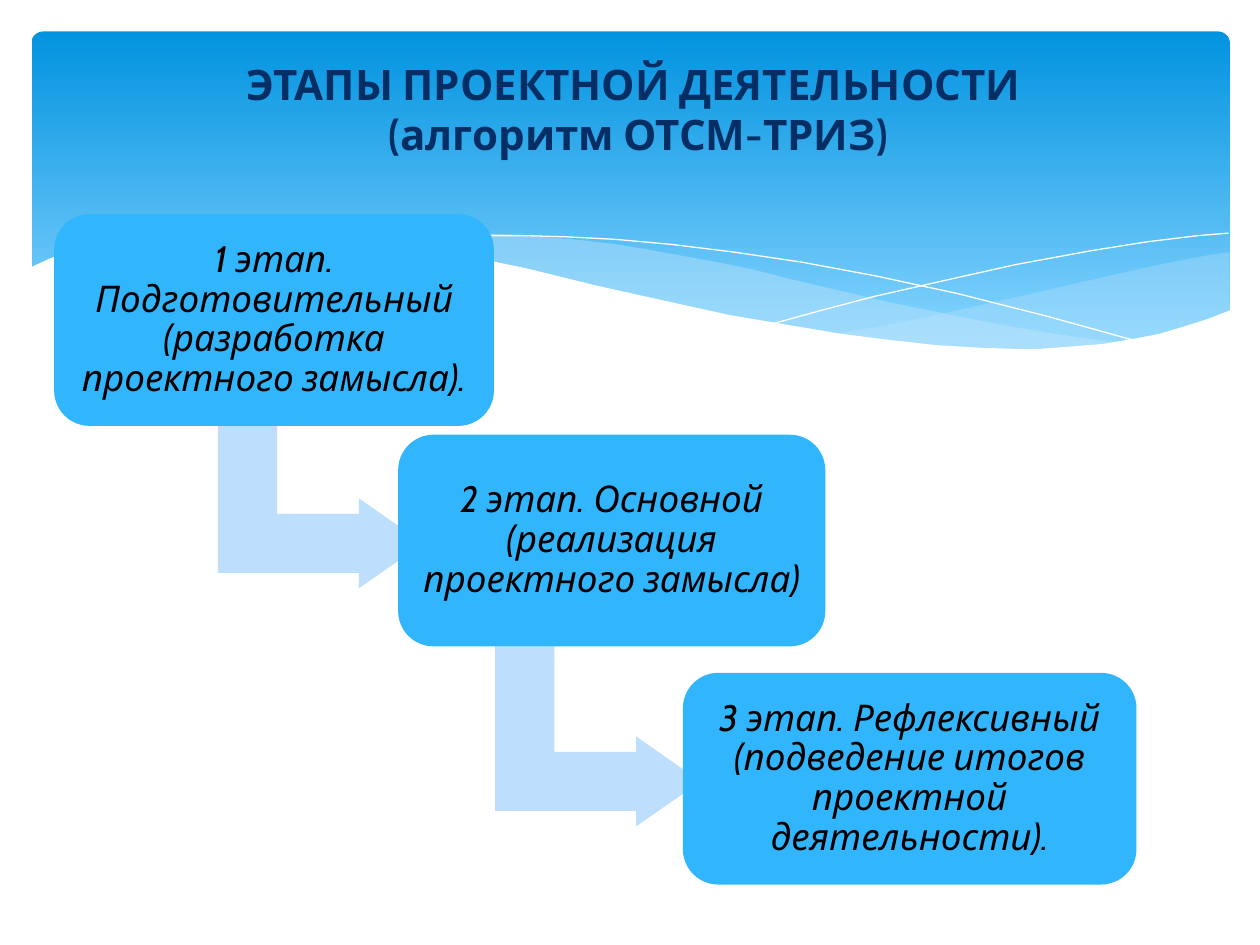
from lxml import etree
from pptx import Presentation
from pptx.dml.color import RGBColor
from pptx.enum.shapes import MSO_SHAPE
from pptx.enum.text import MSO_ANCHOR, PP_ALIGN
from pptx.oxml.ns import qn
from pptx.util import Inches, Pt

ROUNDED = MSO_SHAPE.ROUNDED_RECTANGLE
BENT_ARROW = MSO_SHAPE.BENT_UP_ARROW
WAVE = MSO_SHAPE.WAVE
MIDDLE = MSO_ANCHOR.MIDDLE
CENTER = PP_ALIGN.CENTER

WHITE = RGBColor(0xFF, 0xFF, 0xFF)
BLACK = RGBColor(0x00, 0x00, 0x00)
NAVY = RGBColor(0x05, 0x2E, 0x65)
SKY_TOP = RGBColor(0x02, 0x93, 0xE0)
SKY_BOTTOM = RGBColor(0x83, 0xD3, 0xFE)
MIST = RGBColor(0xC6, 0xE7, 0xFC)
STEP_BLUE = RGBColor(0x31, 0xB6, 0xFD)
ARROW_BLUE = RGBColor(0xBE, 0xDE, 0xFE)

prs = Presentation()
prs.slide_width = Inches(10)
prs.slide_height = Inches(7.5)
slide = prs.slides.add_slide(prs.slide_layouts[6])
COLUMN = prs.slide_width // 1000
ROW = prs.slide_height // 750


def add_block(preset, cell, color=None):
    left, top, width, height = cell
    block = slide.shapes.add_shape(
        preset, left * COLUMN, top * ROW, width * COLUMN, height * ROW)
    block.shadow.inherit = False
    block.line.fill.background()
    if color is None:
        block.fill.background()
    else:
        block.fill.solid()
        block.fill.fore_color.rgb = color
    return block


def write_lines(block, lines, **font_format):
    frame = block.text_frame
    frame.word_wrap = True
    frame.vertical_anchor = MIDDLE
    for index, line in enumerate(lines):
        paragraph = frame.paragraphs[0] if index == 0 else frame.add_paragraph()
        paragraph.alignment = CENTER
        run = paragraph.add_run()
        run.text = line
        run.font.name = "Cabin"
        run.font.color.rgb = font_format["color"]
        for key in ("size", "bold", "italic"):
            setattr(run.font, key, font_format.get(key))
    return frame


sky = add_block(ROUNDED, (25, 25, 951, 270))
sky.adjustments[0] = 0.034
sky.fill.gradient()
sky.fill.gradient_angle = 270
for stop, color, position in zip(
        sky.fill.gradient_stops, (SKY_TOP, SKY_BOTTOM), (0, 0.9)):
    stop.color.rgb = color
    stop.position = position

right_swell = [
    (976, 200), (962, 202), (935, 207), (906, 213), (876, 220), (832, 230),
    (779, 242), (729, 253), (683, 262), (661, 265), (691, 269), (719, 272),
    (745, 275), (781, 277), (814, 278), (844, 277), (872, 274), (897, 270),
    (921, 265), (942, 259), (963, 252), (976, 247)]
left_swell = [
    (893, 273), (866, 269), (837, 265), (807, 260), (775, 254), (741, 247),
    (706, 240), (668, 231), (629, 222), (598, 214), (569, 208), (541, 203),
    (514, 198), (489, 194), (465, 191), (442, 189), (420, 187), (399, 186),
    (380, 185), (361, 185), (328, 187), (299, 189), (286, 191), (323, 196),
    (362, 203), (404, 211), (449, 222), (491, 232), (530, 240), (566, 248),
    (601, 255), (634, 261), (665, 266), (695, 270), (722, 274), (748, 276),
    (773, 277), (807, 278), (838, 278), (867, 276), (893, 273)]
falling_crest = [
    (309, 195), (328, 192), (353, 189), (387, 187), (416, 187), (450, 188),
    (489, 190), (533, 194), (582, 200), (636, 208), (695, 219), (760, 233),
    (831, 251), (907, 272)]
rising_crest = [
    (613, 257), (653, 246), (695, 235), (748, 223), (806, 210), (866, 199),
    (910, 192), (951, 187), (975, 185)]
white_shore = [
    (977, 246), (959, 253), (940, 259), (920, 265), (899, 269), (875, 273),
    (850, 275), (823, 277), (809, 277), (778, 276), (744, 274), (708, 270),
    (668, 265), (626, 258), (579, 250), (529, 239), (475, 227), (418, 213),
    (365, 202), (316, 194), (271, 188), (230, 185), (193, 184), (161, 184),
    (132, 186), (106, 189), (85, 193), (67, 197), (52, 201), (40, 205),
    (29, 210), (23, 213), (23, 329), (977, 329)]

for outline, color, opacity in (
        (right_swell, MIST, 29), (left_swell, MIST, 40),
        (falling_crest, None, 100), (rising_crest, None, 100),
        (white_shore, WHITE, 100)):
    builder = slide.shapes.build_freeform(*outline[0], scale=COLUMN)
    builder.add_line_segments(outline[1:], close=color is not None)
    ripple = builder.convert_to_shape()
    ripple.shadow.inherit = False
    if color is None:
        ripple.fill.background()
        ripple.line.color.rgb = WHITE
        ripple.line.width = Pt(0)
        continue
    ripple.line.fill.background()
    ripple.fill.solid()
    ripple.fill.fore_color.rgb = color
    if opacity < 100:
        tint = ripple.fill._xPr.find(qn("a:solidFill"))[0]
        etree.SubElement(tint, qn("a:alpha")).set("val", str(opacity * 1000))

stages = (
    ((43, 170, 349, 168), (183, 314, 143, 163),
     "1 этап. Подготовительный (разработка проектного замысла)."),
    ((316, 345, 339, 168), (403, 503, 143, 163),
     "2 этап. Основной (реализация проектного замысла)"),
    ((542, 534, 360, 168), None,
     "3 этап. Рефлексивный (подведение итогов проектной деятельности)."))

for stage_cell, arrow_cell, wording in stages:
    if arrow_cell:
        arrow = add_block(BENT_ARROW, arrow_cell, ARROW_BLUE)
        arrow.rotation = 90
        for index, share in enumerate((0.328, 0.25, 0.358)):
            arrow.adjustments[index] = share
    stage = add_block(ROUNDED, stage_cell, STEP_BLUE)
    stage.adjustments[0] = 0.167
    frame = write_lines(stage, [wording], size=Pt(21), italic=True, color=BLACK)
    frame.paragraphs[0].line_spacing = 0.9
    for side in ("left", "top", "right", "bottom"):
        setattr(frame, f"margin_{side}", 9 * COLUMN)

heading = add_block(WAVE, (59, 21, 890, 131))
heading_frame = write_lines(
    heading, ["ЭТАПЫ ПРОЕКТНОЙ ДЕЯТЕЛЬНОСТИ ", "(алгоритм ОТСМ-ТРИЗ)"],
    size=Pt(24), bold=True, color=NAVY)
for paragraph in heading_frame.paragraphs:
    paragraph._p.get_or_add_pPr().set("marL", str(5 * COLUMN))

prs.save("out.pptx")
